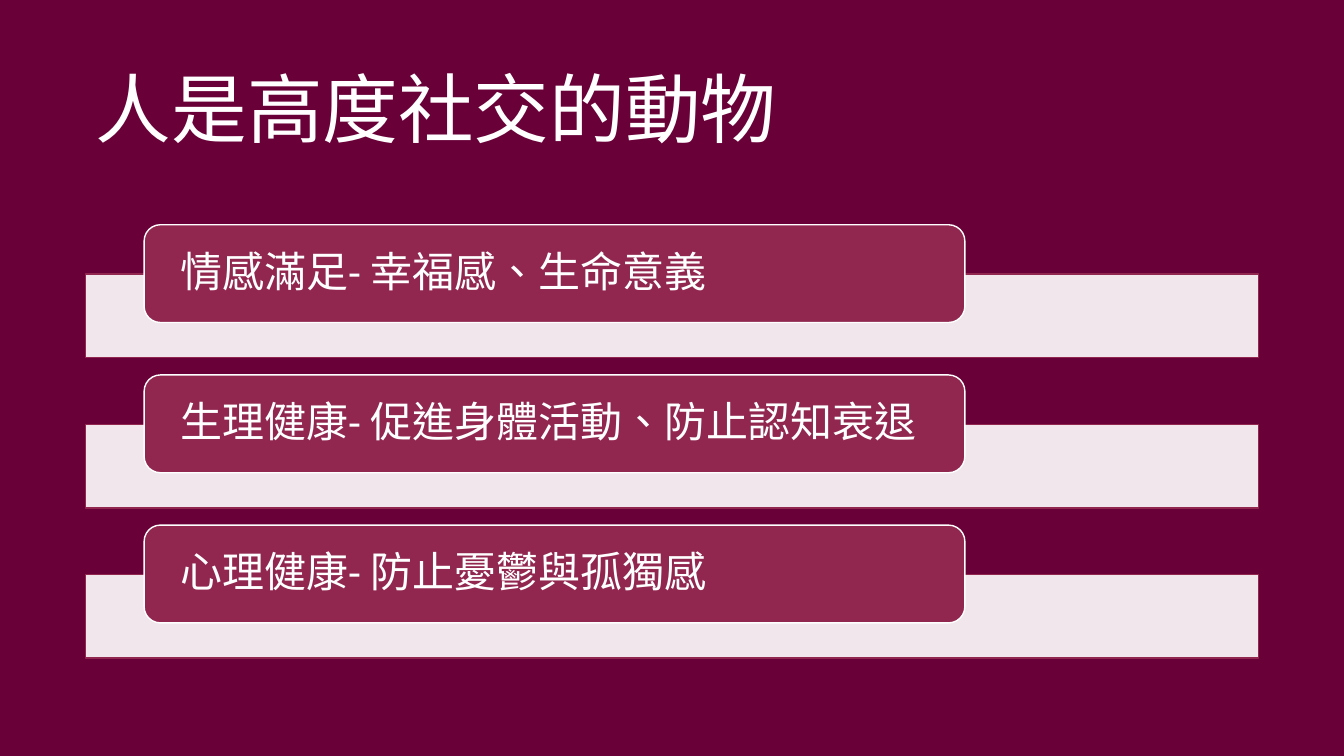
from lxml.etree import SubElement
from pptx import Presentation
from pptx.dml.color import RGBColor
from pptx.enum.shapes import MSO_SHAPE as Shape
from pptx.enum.text import MSO_ANCHOR as Anchor, MSO_AUTO_SIZE as AutoSize, PP_ALIGN as Align
from pptx.oxml.ns import qn
from pptx.util import Inches, Pt

BACKDROP = RGBColor(0x42, 0x00, 0x23)
WINE = RGBColor(0x6E, 0x00, 0x3B)
BERRY = RGBColor(0x91, 0x27, 0x4F)
WHITE = RGBColor(0xFF, 0xFF, 0xFF)
CJK_FONT = "Noto Sans CJK SC"

TITLE = "人是高度社交的動物"
BENEFITS = [
    "情感滿足- 幸福感、生命意義",
    "生理健康- 促進身體活動、防止認知衰退",
    "心理健康- 防止憂鬱與孤獨感",
]
SLIDE_WIDTH, SLIDE_HEIGHT = 13.33, 7.5
CONTENT_LEFT, CONTENT_WIDTH = 0.85, 11.63
FIRST_CARD_TOP, ROW_STEP = 2.23, 1.49
CARD_LEFT, CARD_WIDTH, CARD_HEIGHT = 1.43, 8.14, 0.97
BAR_OFFSET, BAR_HEIGHT = 0.49, 0.83


def write_text(holder, text, *, size, font, inset_x=0.1, inset_y=0.05):
    frame = holder.text_frame
    frame.word_wrap = True
    frame.auto_size = AutoSize.NONE
    frame.vertical_anchor = Anchor.MIDDLE
    frame.margin_left = frame.margin_right = Inches(inset_x)
    frame.margin_top = frame.margin_bottom = Inches(inset_y)
    paragraph = frame.paragraphs[0]
    paragraph.alignment = Align.LEFT
    paragraph.line_spacing = 0.9
    run = paragraph.add_run()
    run.text = text
    run.font.size = Pt(size)
    run.font.name = font
    run.font.color.rgb = WHITE
    properties = run.font._element
    properties.set("lang", "zh-TW")
    SubElement(properties, qn("a:ea")).set("typeface", CJK_FONT)


def add_panel(slide, kind, left, top, width, height, *, fill, line=None, opacity=100):
    panel = slide.shapes.add_shape(
        kind, Inches(left), Inches(top), Inches(width), Inches(height))
    panel.shadow.inherit = False
    panel.fill.solid()
    panel.fill.fore_color.rgb = fill
    if opacity < 100:
        color = panel._element.spPr.find(qn("a:solidFill"))[0]
        SubElement(color, qn("a:alpha")).set("val", str(opacity * 1000))
    if line is None:
        panel.line.fill.background()
    else:
        panel.line.color.rgb = line
        panel.line.width = Pt(1)
    return panel


def add_backdrop(slide):
    slide.background.fill.solid()
    slide.background.fill.fore_color.rgb = BACKDROP
    tint = add_panel(slide, Shape.RECTANGLE, 0, 0, SLIDE_WIDTH, SLIDE_HEIGHT,
                     fill=WINE, opacity=90)
    slide.shapes.title._element.addprevious(tint._element)


def add_title(slide):
    title = slide.shapes.title
    title.left, title.top = Inches(CONTENT_LEFT), Inches(0.4)
    title.width, title.height = Inches(CONTENT_WIDTH), Inches(1.45)
    write_text(title, TITLE, size=54, font=CJK_FONT)


def add_benefit(slide, text, top):
    add_panel(slide, Shape.RECTANGLE, CONTENT_LEFT, top + BAR_OFFSET,
              CONTENT_WIDTH, BAR_HEIGHT, fill=WHITE, line=BERRY, opacity=90)
    card = add_panel(slide, Shape.ROUNDED_RECTANGLE, CARD_LEFT, top,
                     CARD_WIDTH, CARD_HEIGHT, fill=BERRY, line=WHITE)
    write_text(card, text, size=30, font="Calibri", inset_x=0.31, inset_y=0)


def main():
    deck = Presentation()
    deck.slide_width, deck.slide_height = Inches(SLIDE_WIDTH), Inches(SLIDE_HEIGHT)
    slide = deck.slides.add_slide(deck.slide_layouts[5])
    add_backdrop(slide)
    add_title(slide)
    for row, text in enumerate(BENEFITS):
        add_benefit(slide, text, FIRST_CARD_TOP + row * ROW_STEP)
    deck.save("out.pptx")


if __name__ == "__main__":
    main()
